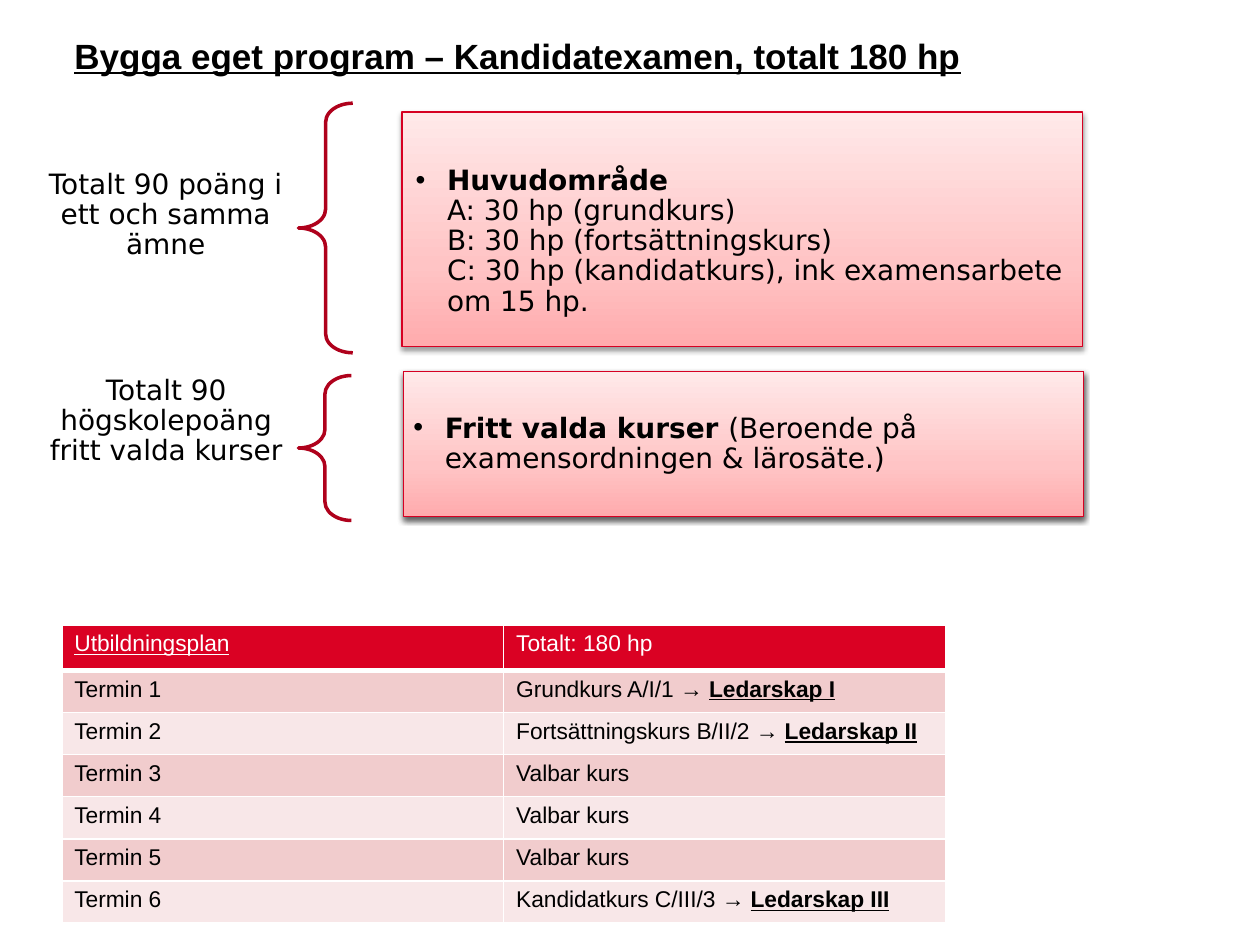
from copy import deepcopy

from lxml.etree import SubElement
from pptx import Presentation
from pptx.dml.color import RGBColor
from pptx.enum.shapes import MSO_SHAPE as Shape
from pptx.enum.text import MSO_ANCHOR as Anchor, PP_ALIGN as Align
from pptx.oxml.ns import qn
from pptx.util import Pt

TITLE = "Bygga eget program – Kandidatexamen, totalt 180 hp"
SANS, BODY = "Arial", "DejaVu Sans"
GRADIENT = [(0, "FFABAD"), (0.35, "FFC4C5"), (1, "FFE9E9")]
CREDITS = [
    ("Totalt 90 poäng i ett och samma ämne", (18, 79.9, 153.4, 86.4), 10),
    ("Totalt 90 högskolepoäng fritt valda kurser", (18.7, 199.4, 152.6, 82.8), 9.4),
]
BRACES = [(170.6, 59, 31, 142.6), (170.6, 214.6, 30.2, 82.8)]
FREE_PANEL = (230.4, 212.4, 388.8, 82.8)
PANELS = [(229.7, 64.1, 388.8, 133.9), FREE_PANEL, FREE_PANEL]
MAIN_FIELD = [
    ("Huvudområde\n", True),
    ("A: 30 hp (grundkurs)\nB: 30 hp (fortsättningskurs)\n"
     "C: 30 hp (kandidatkurs), ink examensarbete om 15 hp.", False),
]
FREE_COURSES = [
    ("Fritt valda kurser ", True),
    ("(Beroende på examensordningen & lärosäte.)", False),
]
TERMS = [
    ("Grundkurs A/I/1 → ", "Ledarskap I"),
    ("Fortsättningskurs B/II/2 → ", "Ledarskap II"),
    ("Valbar kurs", ""),
    ("Valbar kurs", ""),
    ("Valbar kurs", ""),
    ("Kandidatkurs C/III/3 → ", "Ledarskap III"),
]


def rgb(value):
    return RGBColor.from_string(value)


def points(box):
    return [Pt(length) for length in box]


def add_runs(paragraph, runs, size, face, color="000000", underline=()):
    for text, bold in runs:
        for position, line in enumerate(text.split("\n")):
            if position:
                paragraph.add_line_break()
            if line:
                run = paragraph.add_run()
                run.text = line
                font = run.font
                font.size, font.name, font.bold = Pt(size), face, bold
                font.underline = bold in underline
                font.color.rgb = rgb(color)


def add_bullet(paragraph, runs):
    properties = paragraph._p.get_or_add_pPr()
    properties.set("marL", str(Pt(18)))
    properties.set("indent", str(Pt(-18)))
    SubElement(properties, qn("a:buFont"), typeface="Arial")
    SubElement(properties, qn("a:buChar"), char="•")
    paragraph.line_spacing = 0.9
    paragraph.alignment = Align.LEFT
    add_runs(paragraph, runs, 16, BODY)


def set_margins(frame, side, top):
    frame.margin_left = frame.margin_right = Pt(side)
    frame.margin_top = frame.margin_bottom = Pt(top)


def add_panel(slide, box):
    panel = slide.shapes.add_shape(Shape.RECTANGLE, *points(box))
    panel.fill.gradient()
    panel.fill.gradient_angle = 90
    stop_list = panel._element.spPr.find(".//" + qn("a:gsLst"))
    stop_list.append(deepcopy(stop_list[0]))
    for stop, (position, color) in zip(panel.fill.gradient_stops, GRADIENT):
        stop.position = position
        stop.color.rgb = rgb(color)
    panel.line.color.rgb = rgb("D60022")
    panel.line.width = Pt(0.75)
    panel.shadow.inherit = False
    effects = panel._element.spPr.find(qn("a:effectLst"))
    shadow = SubElement(effects, qn("a:outerShdw"), blurRad=str(Pt(3.1)),
                        dist=str(Pt(1.6)), dir="5400000", rotWithShape="0")
    tint = SubElement(shadow, qn("a:srgbClr"), val="000000")
    SubElement(tint, qn("a:alpha"), val="38000")
    return panel


def add_brace(slide, box):
    brace = slide.shapes.add_shape(Shape.LEFT_BRACE, *points(box))
    brace.adjustments[0], brace.adjustments[1] = 0.35, 0.5
    brace.fill.background()
    brace.line.color.rgb = rgb("AF011C")
    brace.line.width = Pt(2)
    brace.shadow.inherit = False


def add_credits(slide, text, box, side):
    frame = slide.shapes.add_textbox(*points(box)).text_frame
    frame.word_wrap = True
    frame.vertical_anchor = Anchor.MIDDLE
    set_margins(frame, side, 3.6)
    paragraph = frame.paragraphs[0]
    paragraph.alignment, paragraph.line_spacing = Align.CENTER, 0.9
    add_runs(paragraph, [(text, False)], 16, BODY)


def fill_cell(cell, runs, fill, color="000000", underline=(True,), bottom=1):
    properties = cell._tc.get_or_add_tcPr()
    for side, width in (("L", 1), ("R", 1), ("T", 1), ("B", bottom)):
        border = SubElement(properties, qn(f"a:ln{side}"), w=str(Pt(width)))
        SubElement(SubElement(border, qn("a:solidFill")), qn("a:srgbClr"), val="FFFFFF")
    cell.fill.solid()
    cell.fill.fore_color.rgb = rgb(fill)
    add_runs(cell.text_frame.paragraphs[0], runs, 13, SANS, color, underline)


def add_plan(slide):
    plan = slide.shapes.add_table(len(TERMS) + 1, 2, *points((35.3, 357.1, 505, 171.4))).table
    for column in plan.columns:
        column.width = Pt(252.5)
    for index, row in enumerate(plan.rows):
        row.height = Pt(24.1 if index else 25.9)
    fill_cell(plan.cell(0, 0), [("Utbildningsplan", False)], "DA0123", "FFFFFF", (False,), 3)
    fill_cell(plan.cell(0, 1), [("Totalt: 180 hp", False)], "DA0123", "FFFFFF", (), 3)
    for term, (course, leadership) in enumerate(TERMS, 1):
        fill = "F1CCCD" if term % 2 else "F8E7E8"
        fill_cell(plan.cell(term, 0), [(f"Termin {term}", False)], fill)
        fill_cell(plan.cell(term, 1), [(course, False), (leadership, True)], fill)


def add_title(slide):
    title = slide.shapes.title
    title.left, title.top, title.width, title.height = points((35.3, 15.8, 524.9, 31.7))
    title.fill.solid()
    title.fill.fore_color.rgb = rgb("FFFFFF")
    title.line.color.rgb = rgb("FFFFFF")
    title.line.width = Pt(2)
    frame = title.text_frame
    frame.word_wrap = False
    frame.vertical_anchor = Anchor.MIDDLE
    frame.paragraphs[0].alignment = Align.LEFT
    add_runs(frame.paragraphs[0], [(TITLE, True)], 20, SANS, underline=(True,))


def main():
    """Build the slide on designing a bachelor's programme."""
    deck = Presentation()
    deck.slide_width, deck.slide_height = Pt(720), Pt(540)
    slide = deck.slides.add_slide(deck.slide_layouts[5])
    add_title(slide)
    add_plan(slide)
    for credits in CREDITS:
        add_credits(slide, *credits)
    for box in BRACES:
        add_brace(slide, box)
    panels = [add_panel(slide, box) for box in PANELS]

    free_frame = panels[-1].text_frame
    free_frame.word_wrap = True
    free_frame.vertical_anchor = Anchor.MIDDLE
    set_margins(free_frame, 5.8, 5.8)
    add_bullet(free_frame.paragraphs[0], FREE_COURSES)

    main_frame = slide.shapes.add_textbox(*points((230.4, 91.4, 398.9, 117.4))).text_frame
    main_frame.word_wrap = True
    add_bullet(main_frame.paragraphs[0], MAIN_FIELD)
    deck.save("out.pptx")


if __name__ == "__main__":
    main()
